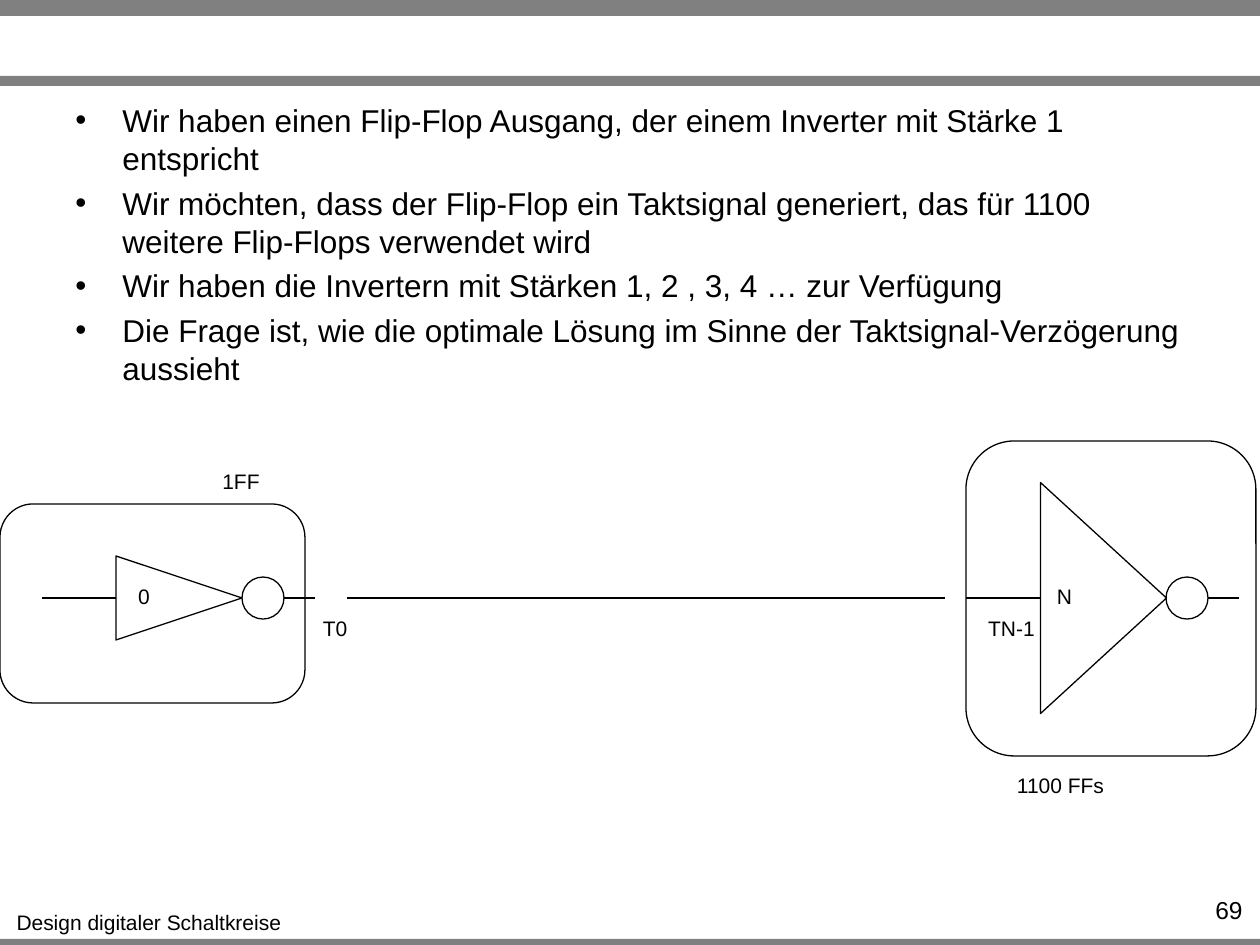
from lxml.etree import SubElement
from pptx import Presentation
from pptx.dml.color import RGBColor
from pptx.enum.shapes import MSO_CONNECTOR, MSO_SHAPE
from pptx.enum.text import MSO_AUTO_SIZE, PP_ALIGN
from pptx.oxml.ns import qn
from pptx.util import Emu, Pt

BLACK = RGBColor(0, 0, 0)
WHITE = RGBColor(255, 255, 255)
GRAY = RGBColor(128, 128, 128)
EMU_PER_PX = 914400 / 126
WIDTH, HEIGHT = 1260, 945
AXIS = 598          # height of the signal path
TRIANGLE = 126      # length of an inverter triangle
BUBBLE = 42
BULLET_INDENT = 47


def px(length):
    return Emu(round(length * EMU_PER_PX))


class Sketch:
    font = "Arial"
    line_width = Pt(0.75)

    def __init__(self, slide):
        self.slide = slide

    def shape(self, kind, left, top, width, height, fill=None, line=BLACK):
        shape = self.slide.shapes.add_shape(kind, *map(px, (left, top, width, height)))
        shape.shadow.inherit = False
        if fill is None:
            shape.fill.background()
        else:
            shape.fill.solid()
            shape.fill.fore_color.rgb = fill
        if line is None:
            shape.line.fill.background()
        else:
            shape.line.color.rgb = line
            shape.line.width = self.line_width
        return shape

    def bar(self, top, height):
        self.shape(MSO_SHAPE.RECTANGLE, 0, top, WIDTH, height, GRAY, None)

    def wire(self, start, end):
        wire = self.slide.shapes.add_connector(
            MSO_CONNECTOR.STRAIGHT, px(start), px(AXIS), px(end), px(AXIS))
        wire.line.color.rgb = BLACK
        wire.line.width = self.line_width
        SubElement(wire._element.spPr, qn("a:effectLst"))

    def inverter(self, tip, height):
        back = tip - TRIANGLE
        self.wire(tip - 200, back)
        self.wire(tip, tip + 73)
        self.shape(MSO_SHAPE.OVAL, tip, AXIS - BUBBLE // 2, BUBBLE, BUBBLE, WHITE)
        # The frame is given before its quarter turn around the centre
        center = tip - TRIANGLE // 2
        triangle = self.shape(MSO_SHAPE.ISOSCELES_TRIANGLE, center - height // 2,
                              AXIS - TRIANGLE // 2, height, TRIANGLE)
        triangle.rotation = 90

    def text(self, lines, left, top, width, height, size, **paragraph_format):
        box = self.slide.shapes.add_textbox(*map(px, (left, top, width, height)))
        frame = box.text_frame
        frame.word_wrap = True
        for index, line in enumerate(lines):
            para = frame.paragraphs[0] if index == 0 else frame.add_paragraph()
            for name, value in paragraph_format.items():
                setattr(para, name, value)
            span = para.add_run()
            span.text = line
            for name, value in {"name": self.font, "size": Pt(size)}.items():
                setattr(span.font, name, value)
            span.font.color.rgb = BLACK
        return frame

    def label(self, text, left, top, width):
        frame = self.text([text], left, top, width, 38, 12, alignment=PP_ALIGN.CENTER)
        frame.word_wrap = False
        frame.auto_size = MSO_AUTO_SIZE.SHAPE_TO_FIT_TEXT

    def bullets(self, lines, left, top, width, height):
        frame = self.text(lines, left, top, width, height, 18, space_before=Pt(4))
        for para in frame.paragraphs:
            properties = para._p.get_or_add_pPr()
            properties.set("marL", str(px(BULLET_INDENT)))
            properties.set("indent", str(-px(BULLET_INDENT)))
            SubElement(properties, qn("a:buFont"), typeface=self.font)
            SubElement(properties, qn("a:buChar"), char="•")


def main():
    deck = Presentation()
    deck.slide_width, deck.slide_height = px(WIDTH), px(HEIGHT)
    page = Sketch(deck.slides.add_slide(deck.slide_layouts[6]))

    # Page frame and footer
    for top, height in ((939, 10), (0, 16), (76, 10)):
        page.bar(top, height)
    page.label("Design digitaler Schaltkreise", 1, 903, 296)
    page.text(["69"], 1146, 889, 109, 30, 14, alignment=PP_ALIGN.RIGHT)

    # Task description
    page.bullets([
        "Wir haben einen Flip-Flop Ausgang, der einem Inverter mit Stärke 1 entspricht",
        "Wir möchten, dass der Flip-Flop ein Taktsignal generiert, das für 1100 "
        "weitere Flip-Flops verwendet wird",
        "Wir haben die Invertern mit Stärken 1, 2 , 3, 4 … zur Verfügung",
        "Die Frage ist, wie die optimale Lösung im Sinne der Taktsignal-Verzögerung "
        "aussieht",
    ], 63, 95, 1134, 178)

    # First and last inverter with the path between them
    page.inverter(242, 84)
    page.wire(347, 945)
    page.inverter(1166, 231)

    # Flip-flop outlines
    page.shape(MSO_SHAPE.ROUNDED_RECTANGLE, 0, 504, 305, 199)
    page.shape(MSO_SHAPE.ROUNDED_RECTANGLE, 966, 441, 290, 315)

    # Labels, each a little wider than its text so that no word breaks
    for text, left, top, width in (
        ("0", 124, 577, 40),
        ("N", 1042, 577, 45),
        ("T0", 308, 609, 54),
        ("TN-1", 973, 609, 77),
        ("1FF", 207, 462, 68),
        ("1100 FFs", 1002, 766, 117),
    ):
        page.label(text, left, top, width)

    deck.save("out.pptx")


if __name__ == "__main__":
    main()
